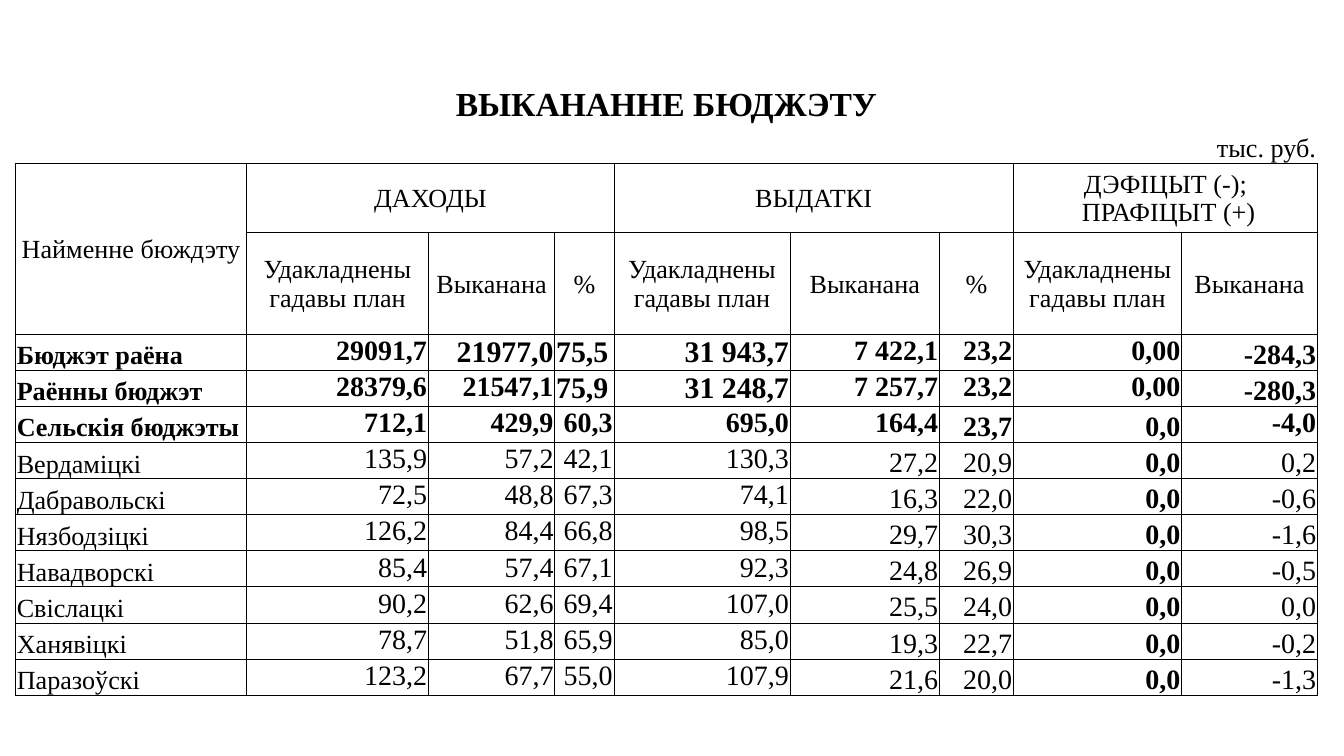
import itertools
import pptx
import pptx.dml.color
import pptx.enum.text
import pptx.util
import pptx.oxml
import pptx.oxml.ns

FONT = "Times New Roman"
INK = "000000"
COLUMN_WEIGHTS = [1.72, 1, 0.35, 0.54, 0.4, 0.44, 1.31, 0.89, 0.22, 0.55, 1.25, 0.12, 0.89]
ROW_WEIGHTS = [0.34, 0.27, 0.52, 0.76] + [0.27] * 10
FIELD_EDGES = [0, 1, 3, 5, 6, 7, 9, 10, 11, 13]
FIELDS = list(itertools.pairwise(FIELD_EDGES))
HEADER_ROW, FIRST_DATA_ROW = 2, 4
GROUPS = [("ДАХОДЫ", 1, 6), ("ВЫДАТКІ", 6, 10), ("ДЭФІЦЫТ (-);\n ПРАФІЦЫТ (+)", 10, 13)]
PLAN, DONE = "Удакладнены гадавы план", "Выканана"
FIELD_NAMES = [PLAN, DONE, "%", PLAN, DONE, "%", PLAN, DONE]
TOTALS = [
    ("Бюджэт раёна", "29091,7", "21977,0", "75,5", "31 943,7", "7 422,1", "23,2", "0,00", "-284,3"),
    ("Раённы бюджэт", "28379,6", "21547,1", "75,9", "31 248,7", "7 257,7", "23,2", "0,00", "-280,3"),
    ("Сельскія бюджэты", "712,1", "429,9", "60,3", "695,0", "164,4", "23,7", "0,0", "-4,0"),
]
TOTAL_SIZES = [
    (14, 15, 16, 16, 16, 15, 15, 15, 15),
    (14, 15, 15, 16, 16, 15, 15, 15, 15),
    (14,) + (15,) * 8,
]
TOTAL_ANCHORS = ["btttttttb", "btttttttb", "btttttbbt"]
VILLAGES = [
    ("Вердаміцкі", "135,9", "57,2", "42,1", "130,3", "27,2", "20,9", "0,0", "0,2"),
    ("Дабравольскі", "72,5", "48,8", "67,3", "74,1", "16,3", "22,0", "0,0", "-0,6"),
    ("Нязбодзіцкі", "126,2", "84,4", "66,8", "98,5", "29,7", "30,3", "0,0", "-1,6"),
    ("Навадворскі", "85,4", "57,4", "67,1", "92,3", "24,8", "26,9", "0,0", "-0,5"),
    ("Свіслацкі", "90,2", "62,6", "69,4", "107,0", "25,5", "24,0", "0,0", "0,0"),
    ("Ханявіцкі", "78,7", "51,8", "65,9", "85,0", "19,3", "22,7", "0,0", "-0,2"),
    ("Паразоўскі", "123,2", "67,7", "55,0", "107,9", "21,6", "20,0", "0,0", "-1,3"),
]
VILLAGE_SIZES = (14,) + (15,) * 8
VILLAGE_ANCHORS = "bttttbbbb"
ALIGNMENTS = {
    "l": pptx.enum.text.PP_ALIGN.LEFT,
    "c": pptx.enum.text.PP_ALIGN.CENTER,
    "r": pptx.enum.text.PP_ALIGN.RIGHT,
}
ANCHORS = {
    "t": pptx.enum.text.MSO_ANCHOR.TOP,
    "m": pptx.enum.text.MSO_ANCHOR.MIDDLE,
    "b": pptx.enum.text.MSO_ANCHOR.BOTTOM,
}


def color(hex_string):
    """Turn a hex string into a colour."""
    return pptx.dml.color.RGBColor.from_string(hex_string)


def style_cell(cell, sides):
    """Clear the fill, draw the named borders and keep an empty cell small."""
    properties = cell._tc.get_or_add_tcPr()
    namespace = pptx.oxml.ns.nsdecls("a")
    for side in "LRTB":
        paint = f'<a:solidFill><a:srgbClr val="{INK}"/></a:solidFill>' if side in sides else "<a:noFill/>"
        properties.append(pptx.oxml.parse_xml(f'<a:ln{side} {namespace} w="6350">{paint}</a:ln{side}>'))
    cell.fill.background()
    cell.margin_left = cell.margin_right = cell.margin_top = pptx.util.Inches(0.01)
    cell.margin_bottom = 0
    paragraph = cell.text_frame.paragraphs[0]
    paragraph._p.append(pptx.oxml.parse_xml(f'<a:endParaRPr {namespace} sz="1400"/>'))


def write_cell(cell, text, size=14, bold=False, alignment="c", anchor="m"):
    """Put formatted text in a cell."""
    cell.text_frame.text = text
    cell.vertical_anchor = ANCHORS[anchor]
    for paragraph in cell.text_frame.paragraphs:
        paragraph.alignment = ALIGNMENTS[alignment]
        for run in paragraph.runs:
            run.font.name = FONT
            run.font.size = pptx.util.Pt(size)
            run.font.bold = bold
            run.font.color.rgb = color(INK)


def merge_span(table, row, start, end, last_row=None):
    """Merge the columns from start up to end and return the first cell."""
    cell = table.cell(row, start)
    bottom = row if last_row is None else last_row
    if end - start > 1 or bottom > row:
        cell.merge(table.cell(bottom, end - 1))
    return cell


def fill_heading(table):
    """Fill the title, the unit and the two header rows."""
    write_cell(merge_span(table, 0, 0, len(COLUMN_WEIGHTS)), "ВЫКАНАННЕ БЮДЖЭТУ", 18, True)
    for start in (2, 4, 8, 10):
        merge_span(table, 1, start, start + 2)
    write_cell(table.cell(1, 12), "тыс. руб.", alignment="r", anchor="b")
    write_cell(merge_span(table, HEADER_ROW, 0, 1, HEADER_ROW + 1), "Найменне бюждэту")
    for text, start, end in GROUPS:
        write_cell(merge_span(table, HEADER_ROW, start, end), text)
    for text, (start, end) in zip(FIELD_NAMES, FIELDS[1:]):
        write_cell(merge_span(table, HEADER_ROW + 1, start, end), text)


def fill_record(table, row, record, sizes, anchors, is_total):
    """Fill one budget row."""
    for field, (start, end) in enumerate(FIELDS):
        is_left = field == 0 or (field == 3 and sizes[field] == 16)
        write_cell(
            merge_span(table, row, start, end),
            record[field],
            sizes[field],
            is_total or field == 7,
            "l" if is_left else "r",
            anchors[field],
        )


def add_budget_table(slide, left, top, width, height):
    """Build the budget table inside the given box."""
    frame = slide.shapes.add_table(len(ROW_WEIGHTS), len(COLUMN_WEIGHTS), left, top, width, height)
    table = frame.table
    table.first_row = table.horz_banding = False
    for column, weight in zip(table.columns, COLUMN_WEIGHTS):
        column.width = int(width * weight / sum(COLUMN_WEIGHTS))
    for row, weight in zip(table.rows, ROW_WEIGHTS):
        row.height = int(height * weight / sum(ROW_WEIGHTS))
    for index, row in enumerate(table.rows):
        for cell in row.cells:
            style_cell(cell, ("", "B")[index] if index < HEADER_ROW else "LRTB")
    fill_heading(table)
    for index, record in enumerate(TOTALS):
        fill_record(table, FIRST_DATA_ROW + index, record, TOTAL_SIZES[index], TOTAL_ANCHORS[index], True)
    for row, record in enumerate(VILLAGES, FIRST_DATA_ROW + len(TOTALS)):
        fill_record(table, row, record, VILLAGE_SIZES, VILLAGE_ANCHORS, False)


def main():
    """Create the presentation and save it."""
    presentation = pptx.Presentation()
    presentation.slide_width = pptx.util.Pt(720)
    presentation.slide_height = pptx.util.Pt(405)
    slide = presentation.slides.add_slide(presentation.slide_layouts[6])
    width, height = presentation.slide_width, presentation.slide_height
    add_budget_table(slide, int(width * 0.0115), int(height * 0.108), int(width * 0.969), int(height * 0.812))
    presentation.save("out.pptx")


if __name__ == "__main__":
    main()
